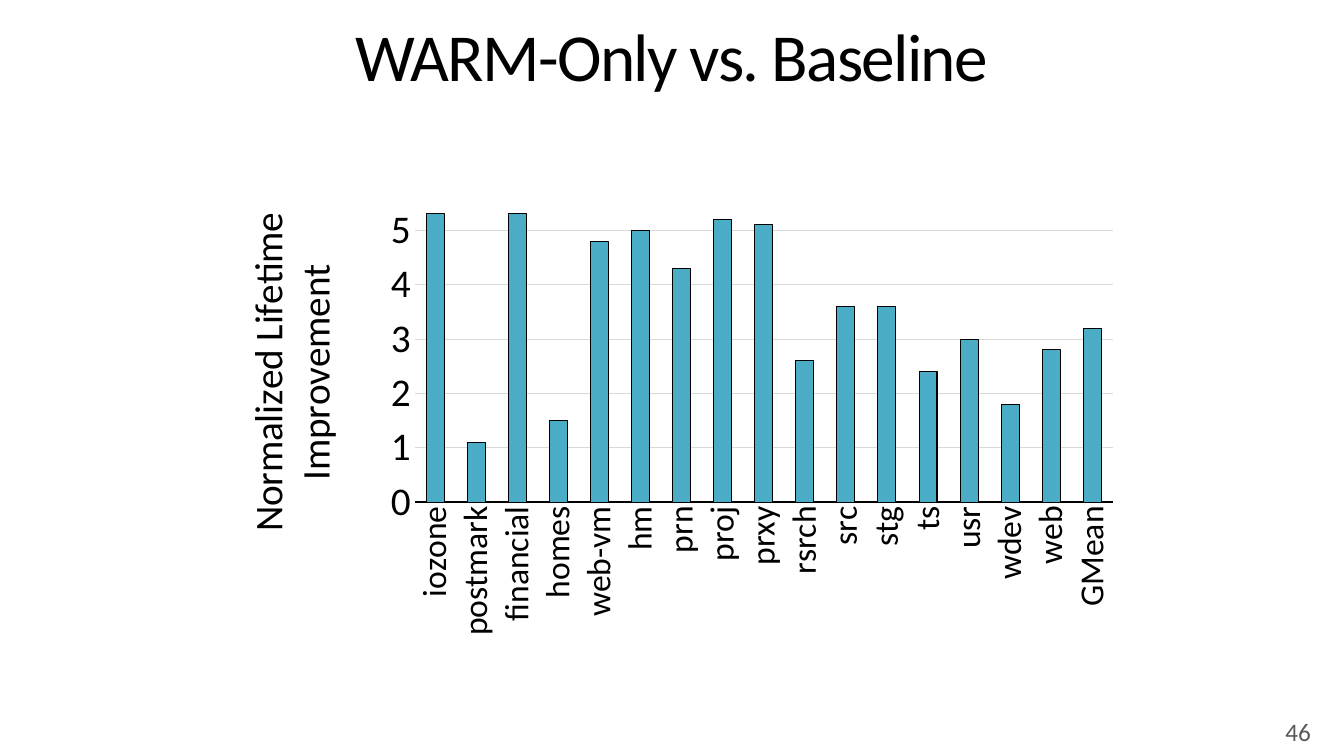
from lxml import etree
from pptx import Presentation
from pptx.chart.data import CategoryChartData
from pptx.dml.color import RGBColor
from pptx.enum.chart import XL_CHART_TYPE as ChartType, XL_TICK_MARK as TickMark
from pptx.enum.text import MSO_ANCHOR as Anchor, PP_ALIGN as Align
from pptx.oxml import parse_xml
from pptx.oxml.ns import nsdecls, qn
from pptx.util import Inches, Pt

WIDTH, HEIGHT = 13.33, 7.5
LIFETIME = {
    "iozone": 5.3, "postmark": 1.1, "financial": 5.3, "homes": 1.5,
    "web-vm": 4.8, "hm": 5, "prn": 4.3, "proj": 5.2, "prxy": 5.1,
    "rsrch": 2.6, "src": 3.6, "stg": 3.6, "ts": 2.4, "usr": 3,
    "wdev": 1.8, "web": 2.8, "GMean": 3.2,
}


def colour(code):
    return RGBColor.from_string(code)


def layout(left, top, width=None, height=None):
    element = parse_xml(f"<c:layout {nsdecls('c')}><c:manualLayout/></c:layout>")
    entries = [("xMode", "edge"), ("yMode", "edge"), ("x", left), ("y", top)]
    if width is not None:
        entries = [("layoutTarget", "inner"), *entries, ("w", width), ("h", height)]
    for name, value in entries:
        etree.SubElement(element[0], qn(f"c:{name}")).set("val", str(value))
    return element


class SlideBuilder:
    font_name = "Calibri"
    ink, muted, grid, bar = "000000", "595959", "D9D9D9", "4BACC6"

    def __init__(self, deck):
        self.deck = deck
        self.page = deck.slides.add_slide(deck.slide_layouts[6])

    def area(self, left, top, width, height):
        across, down = self.deck.slide_width, self.deck.slide_height
        return [round(share * size) for share, size in
                zip((left, top, width, height), (across, down, across, down))]

    def style(self, font, size, code):
        font.name, font.size, font.bold = self.font_name, Pt(size), False
        font.color.rgb = colour(code)

    def outline(self, line, code, width):
        line.color.rgb = colour(code)
        line.width = Pt(width)

    def text(self, words, area, size, code, align, line_spacing=1.0, tracking=0):
        frame = self.page.shapes.add_textbox(*self.area(*area)).text_frame
        frame.word_wrap = True
        frame.vertical_anchor = Anchor.MIDDLE
        para = frame.paragraphs[0]
        para.alignment, para.line_spacing = align, line_spacing
        self.style(para.font, size, code)
        span = para.add_run()
        span.text = words
        if tracking:
            span._r.get_or_add_rPr().set("spc", str(round(tracking * 100)))

    def column_chart(self, values, axis_title, area, plot_area):
        data = CategoryChartData(number_format="0.0")
        data.categories = list(values)
        data.add_series("Series 1", list(values.values()))
        chart = self.page.shapes.add_chart(
            ChartType.COLUMN_CLUSTERED, *self.area(*area), data).chart
        chart.has_legend = chart.has_title = False
        self.style(chart.font, 24, self.ink)

        plot = chart.plots[0]
        plot.gap_width, plot.overlap, plot.vary_by_categories = 129, -27, False
        bars = plot.series[0].format
        bars.fill.solid()
        bars.fill.fore_color.rgb = colour(self.bar)
        self.outline(bars.line, self.ink, 0.75)

        names, scale = chart.category_axis, chart.value_axis
        for axis, size in ((names, 24), (scale, 28)):
            axis.major_tick_mark = axis.minor_tick_mark = TickMark.NONE
            self.style(axis.tick_labels.font, size, self.ink)
        self.outline(names.format.line, self.ink, 1.25)
        names.tick_labels.font._element.getparent().getparent().getparent().find(
            qn("a:bodyPr")).set("rot", "-5400000")

        scale.minimum_scale, scale.maximum_scale, scale.major_unit = 0, 5.5, 1
        scale.tick_labels.number_format = "#,##0"
        scale.tick_labels.number_format_is_linked = False
        scale.format.line.fill.background()
        self.outline(scale.major_gridlines.format.line, self.grid, 0.75)

        title = scale.axis_title
        title.text_frame.text = axis_title
        title.text_frame._txBody.find(qn("a:bodyPr")).set("rot", "-5400000")
        self.style(title.text_frame.paragraphs[0].font, 28, self.ink)
        self.place(title._element, layout(0.01, 0.05), qn("c:tx"))
        self.place(chart._chartSpace.chart.plotArea, layout(*plot_area))

    def place(self, parent, element, after=None):
        for old in parent.findall(qn("c:layout")):
            parent.remove(old)
        position = 0 if after is None else parent.index(parent.find(after)) + 1
        parent.insert(position, element)


def main():
    deck = Presentation()
    deck.slide_width, deck.slide_height = Inches(WIDTH), Inches(HEIGHT)
    slide = SlideBuilder(deck)
    slide.text("WARM-Only vs. Baseline", (0, 0, 1, 1.19 / HEIGHT), 48, slide.ink,
               Align.CENTER, line_spacing=0.9, tracking=-1.2)
    slide.column_chart(
        LIFETIME, "Normalized Lifetime Improvement",
        (2.23 / WIDTH, 1.81 / HEIGHT, 8.88 / WIDTH, 4.64 / HEIGHT),
        (0.212, 0.044, 0.78, 0.64))
    slide.text("46", (10.1 / WIDTH, 7.06 / HEIGHT, 3 / WIDTH, 0.4 / HEIGHT), 18,
               slide.muted, Align.RIGHT)
    deck.save("out.pptx")


if __name__ == "__main__":
    main()
